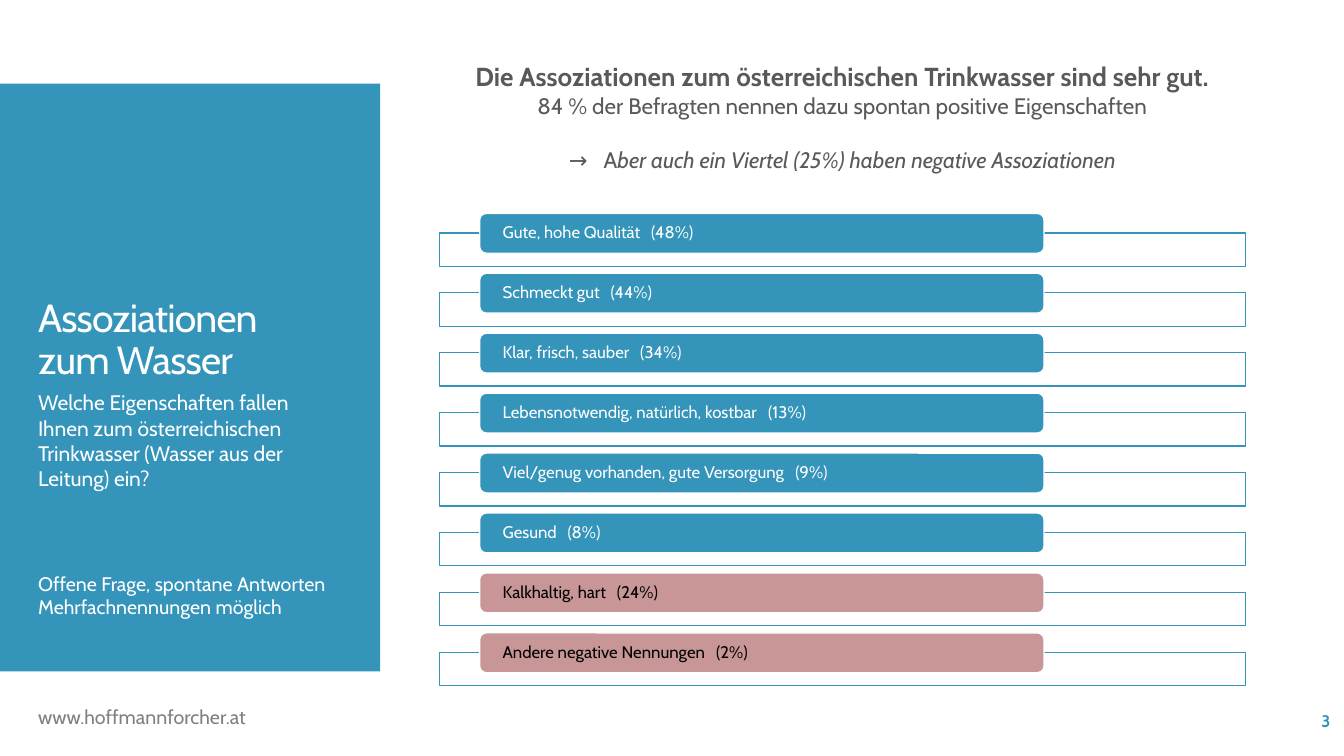
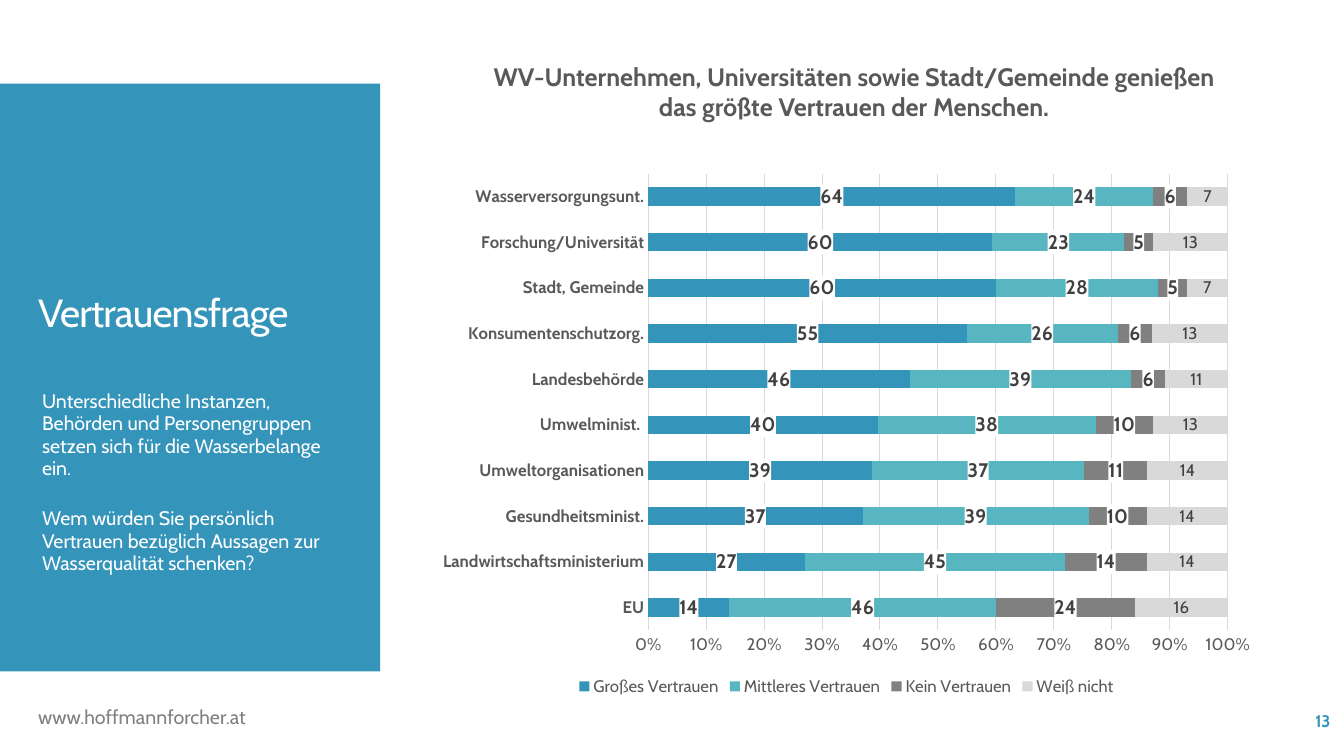
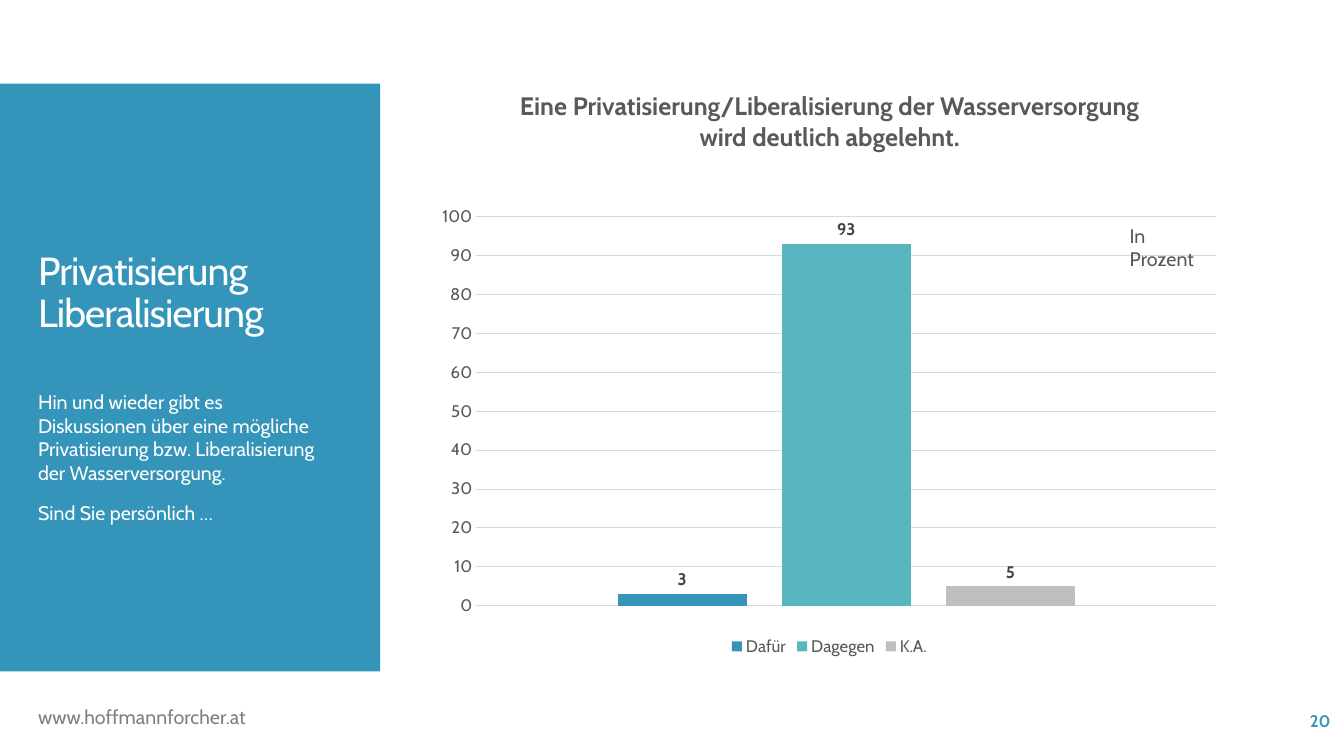
from itertools import zip_longest

from lxml.etree import SubElement
from pptx import Presentation
from pptx.chart.data import CategoryChartData
from pptx.dml.color import RGBColor
from pptx.enum.chart import XL_CHART_TYPE, XL_LABEL_POSITION, XL_LEGEND_POSITION, XL_TICK_MARK
from pptx.enum.shapes import MSO_SHAPE
from pptx.enum.text import MSO_ANCHOR, PP_ALIGN
from pptx.oxml import parse_xml
from pptx.oxml.ns import nsdecls, qn
from pptx.util import Cm, Pt

FONT = "Cabin"
COLORS = {
    "blue": "3494BA",
    "teal": "58B6C0",
    "rose": "C89696",
    "white": "FFFFFF",
    "black": "000000",
    "label": "404040",
    "text": "595959",
    "gray": "808080",
    "silver": "BFBFBF",
    "grid": "D9D9D9",
}
SIDE_LEFT, SIDE_WIDTH = 0.71, 7.87
TITLE_TOP = 3.18


def rgb(name):
    return RGBColor.from_string(COLORS[name])


def style_font(font, size, color, bold=False, italic=False):
    font.name = FONT
    font.size = Pt(size)
    font.bold = bold
    font.italic = italic
    font.color.rgb = rgb(color)


def write(shape, paras, before=(), after=0, line=None, align=PP_ALIGN.LEFT,
          anchor=MSO_ANCHOR.TOP, spacing=0, **style):
    """Fill a shape; a para is a string or a list of (text, format) spans."""
    frame = shape.text_frame
    frame.word_wrap = True
    frame.vertical_anchor = anchor
    for index, (spans, gap) in enumerate(zip_longest(paras, before, fillvalue=0)):
        para = frame.add_paragraph() if index else frame.paragraphs[0]
        para.alignment = align
        para.space_before, para.space_after = Pt(gap), Pt(after)
        if line:
            para.line_spacing = line
        for text, extra in ([(spans, {})] if isinstance(spans, str) else spans):
            look = {"spacing": spacing, **style, **extra}
            tracking = look.pop("spacing")
            span = para.add_run()
            span.text = text
            style_font(span.font, **look)
            if tracking:
                span.font._element.set("spc", str(round(tracking * 100)))


def add_text(page, left, top, width, height, paras, **options):
    box = page.shapes.add_textbox(Cm(left), Cm(top), Cm(width), Cm(height))
    write(box, paras, **options)


def add_block(page, kind, left, top, width, height, fill, line=None):
    block = page.shapes.add_shape(kind, Cm(left), Cm(top), Cm(width), Cm(height))
    block.shadow.inherit = False
    block.fill.solid()
    block.fill.fore_color.rgb = rgb(fill)
    if line:
        block.line.color.rgb = rgb(line)
        block.line.width = Pt(0.85)
    else:
        block.line.fill.background()
    return block


def add_page(deck, number, title, title_bottom):
    """Add a slide with the side panel, its title, the footer and the page number."""
    page = deck.slides.add_slide(deck.slide_layouts[6])
    add_block(page, MSO_SHAPE.RECTANGLE, 0, 2.11, 9.58, 14.81, "blue")
    add_text(page, SIDE_LEFT, 17.65, 5.77, 0.86, ["www.hoffmannforcher.at"],
             size=14, color="gray")
    add_text(page, SIDE_LEFT, TITLE_TOP, SIDE_WIDTH, title_bottom - TITLE_TOP, title,
             anchor=MSO_ANCHOR.BOTTOM, line=0.9, spacing=-0.6, size=28, color="white")
    add_text(page, 29.54, 17.65, 4.24, 1.02, [str(number)], anchor=MSO_ANCHOR.MIDDLE,
             align=PP_ALIGN.RIGHT, size=12, color="blue", bold=True)
    return page


def add_question(page, paras, left=SIDE_LEFT, size=14, **options):
    add_text(page, left, 9.7, SIDE_WIDTH, 6.45, paras, size=size, color="white", **options)


def add_heading(page, left, top, width, height, paras, size=18, **options):
    add_text(page, left, top, width, height, paras, align=PP_ALIGN.CENTER,
             size=size, color="text", bold=True, **options)


def add_answer(page, row, answer, share, fill, color):
    """Add one outlined row with a rounded bar that names an answer."""
    offset = row * 1.51
    add_block(page, MSO_SHAPE.RECTANGLE, 11.07, 5.87 + offset, 20.32, 0.84, "white", "blue")
    bar = add_block(page, MSO_SHAPE.ROUNDED_RECTANGLE, 12.09, 5.38 + offset, 14.22, 1,
                    fill, "white")
    frame = bar.text_frame
    frame.margin_left = frame.margin_right = Cm(0.53)
    frame.margin_top = frame.margin_bottom = 0
    write(bar, [[(answer, {}), (" ", {"spacing": 5}), (f"({share}%)", {})]],
          anchor=MSO_ANCHOR.MIDDLE, line=0.9, size=12, color=color)


def whiten_labels(labels):
    """Put a white background behind data labels."""
    box = parse_xml(f"<c:spPr {nsdecls('c', 'a')}/>")
    fill = SubElement(box, qn("a:solidFill"))
    SubElement(fill, qn("a:srgbClr"), val=COLORS["white"])
    labels._element.find(qn("c:txPr")).addprevious(box)


def add_bars(page, kind, area, categories, series, gap, overlap, position, number_format):
    """Draw bars; a series is (name, values, colour, label size, bold, white label)."""
    data = CategoryChartData()
    data.categories = categories
    for name, values, *_ in series:
        data.add_series(name, values)
    chart = page.shapes.add_chart(kind, *map(Cm, area), data).chart
    style_font(chart.font, 10, "black")
    chart.has_title = False
    chart.has_legend = True
    chart.legend.position = XL_LEGEND_POSITION.BOTTOM
    chart.legend.include_in_layout = False
    style_font(chart.legend.font, 12, "text")

    scale = chart.value_axis
    scale.minimum_scale = 0
    scale.major_tick_mark = XL_TICK_MARK.NONE
    scale.format.line.fill.background()
    scale.major_gridlines.format.line.color.rgb = rgb("grid")
    scale.major_gridlines.format.line.width = Pt(0.75)
    scale.tick_labels.number_format = number_format
    scale.tick_labels.number_format_is_linked = False
    style_font(scale.tick_labels.font, 12, "text")

    plot = chart.plots[0]
    plot.gap_width, plot.overlap = gap, overlap
    plot.vary_by_categories = False
    for drawn, (_, _, color, size, bold, white) in zip(plot.series, series):
        drawn.format.fill.solid()
        drawn.format.fill.fore_color.rgb = rgb(color)
        labels = drawn.data_labels
        labels.show_value = True
        labels.position = position
        style_font(labels.font, size, "label", bold)
        if white:
            whiten_labels(labels)
    return chart


def build_associations(deck):
    page = add_page(deck, 3, ["Assoziationen", "zum Wasser"], 9.78)
    add_question(page, [
        [("Welche Eigenschaften fallen Ihnen zum österreichischen Trinkwasser "
          "(Wasser aus der Leitung) ein?", {"size": 15})],
        "Offene Frage, spontane Antworten",
        "Mehrfachnennungen möglich",
    ], before=(0, 58, 0))
    answers = [
        ("Gute, hohe Qualität", 48),
        ("Schmeckt gut", 44),
        ("Klar, frisch, sauber", 34),
        ("Lebensnotwendig, natürlich, kostbar", 13),
        ("Viel/genug vorhanden, gute Versorgung", 9),
        ("Gesund", 8),
        ("Kalkhaltig, hart", 24),
        ("Andere negative Nennungen", 2),
    ]
    positive_count = 6
    for row, (answer, share) in enumerate(answers):
        fill, color = ("blue", "white") if row < positive_count else ("rose", "black")
        add_answer(page, row, answer, share, fill, color)
    plain = {"bold": False}
    add_heading(page, 11.07, 1.4, 20.32, 3.1, [
        [("Die Assoziationen zum österreichischen Trinkwasser sind sehr gut.", {"size": 18.6})],
        [("84 % der Befragten nennen dazu spontan positive Eigenschaften", plain)],
        [("→", plain), (" ", {"bold": False, "spacing": 8}), ("A", plain),
         ("ber auch ein Viertel (25%) haben negative Assoziationen",
          {"bold": False, "italic": True})],
    ], size=16, before=(0, 0, 19.5))


def build_trust(deck):
    page = add_page(deck, 13, ["Vertrauensfrage"], 8.59)
    categories = [
        "EU", "Landwirtschaftsministerium", "Gesundheitsminist.", "Umweltorganisationen",
        "Umwelminist. ", "Landesbehörde", "Konsumentenschutzorg.", "Stadt, Gemeinde",
        "Forschung/Universität", "Wasserversorgungsunt.",
    ]
    series = [
        ("Großes Vertrauen", (14, 27, 37, 39, 40, 46, 55, 60, 60, 64), "blue", 14, True, True),
        ("Mittleres Vertrauen", (46, 45, 39, 37, 38, 39, 26, 28, 23, 24), "teal", 14, True, True),
        ("Kein Vertrauen", (24, 14, 10, 11, 10, 6, 6, 5, 5, 6), "gray", 14, True, True),
        ("Weiß nicht", (16, 14, 14, 14, 13, 11, 13, 7, 13, 7), "grid", 12, False, False),
    ]
    chart = add_bars(page, XL_CHART_TYPE.BAR_STACKED_100, (10.74, 4.11, 21.18, 13.54),
                     categories, series, 150, 100, XL_LABEL_POSITION.CENTER, "0%")
    axis = chart.category_axis
    axis.major_tick_mark = XL_TICK_MARK.NONE
    axis.format.line.color.rgb = rgb("grid")
    axis.format.line.width = Pt(0.75)
    style_font(axis.tick_labels.font, 12, "text", bold=True)
    add_question(page, [
        "Unterschiedliche Instanzen, Behörden und Personengruppen setzen sich "
        "für die Wasserbelange ein.",
        "Wem würden Sie persönlich Vertrauen bezüglich Aussagen zur "
        "Wasserqualität schenken?",
    ], left=SIDE_LEFT + 0.1, line=Pt(16), before=(0, 12), after=8)
    add_heading(page, 10.36, 1.42, 22.33, 1.8, [
        "WV-Unternehmen, Universitäten sowie Stadt/Gemeinde genießen",
        "das größte Vertrauen der Menschen.",
    ])


def build_privatisation(deck):
    page = add_page(deck, 20, ["Privatisierung", "Liberalisierung"], 8.59)
    add_question(page, [
        "Hin und wieder gibt es Diskussionen über eine mögliche Privatisierung "
        "bzw. Liberalisierung der Wasserversorgung.",
        "Sind Sie persönlich …",
    ], before=(0, 12))
    series = [
        ("Dafür", (3,), "blue", 12, True, False),
        ("Dagegen", (93,), "teal", 12, True, False),
        ("K.A.", (5,), "silver", 12, True, False),
    ]
    chart = add_bars(page, XL_CHART_TYPE.COLUMN_CLUSTERED, (10.74, 4.98, 20.32, 11.66),
                     ["1"], series, 219, -27, XL_LABEL_POSITION.OUTSIDE_END, "General")
    chart.value_axis.maximum_scale = 100
    chart.value_axis.major_unit = 10
    chart.category_axis.visible = False
    add_text(page, 28.22, 5.51, 2.3, 1.5, ["In Prozent"], size=14, color="text")
    add_heading(page, 11.18, 2.16, 19.46, 1.8, [
        "Eine Privatisierung/Liberalisierung der Wasserversorgung",
        "wird deutlich abgelehnt.",
    ])


def main():
    deck = Presentation()
    deck.slide_width, deck.slide_height = Cm(33.87), Cm(19.05)
    build_associations(deck)
    build_trust(deck)
    build_privatisation(deck)
    deck.save("out.pptx")


if __name__ == "__main__":
    main()
